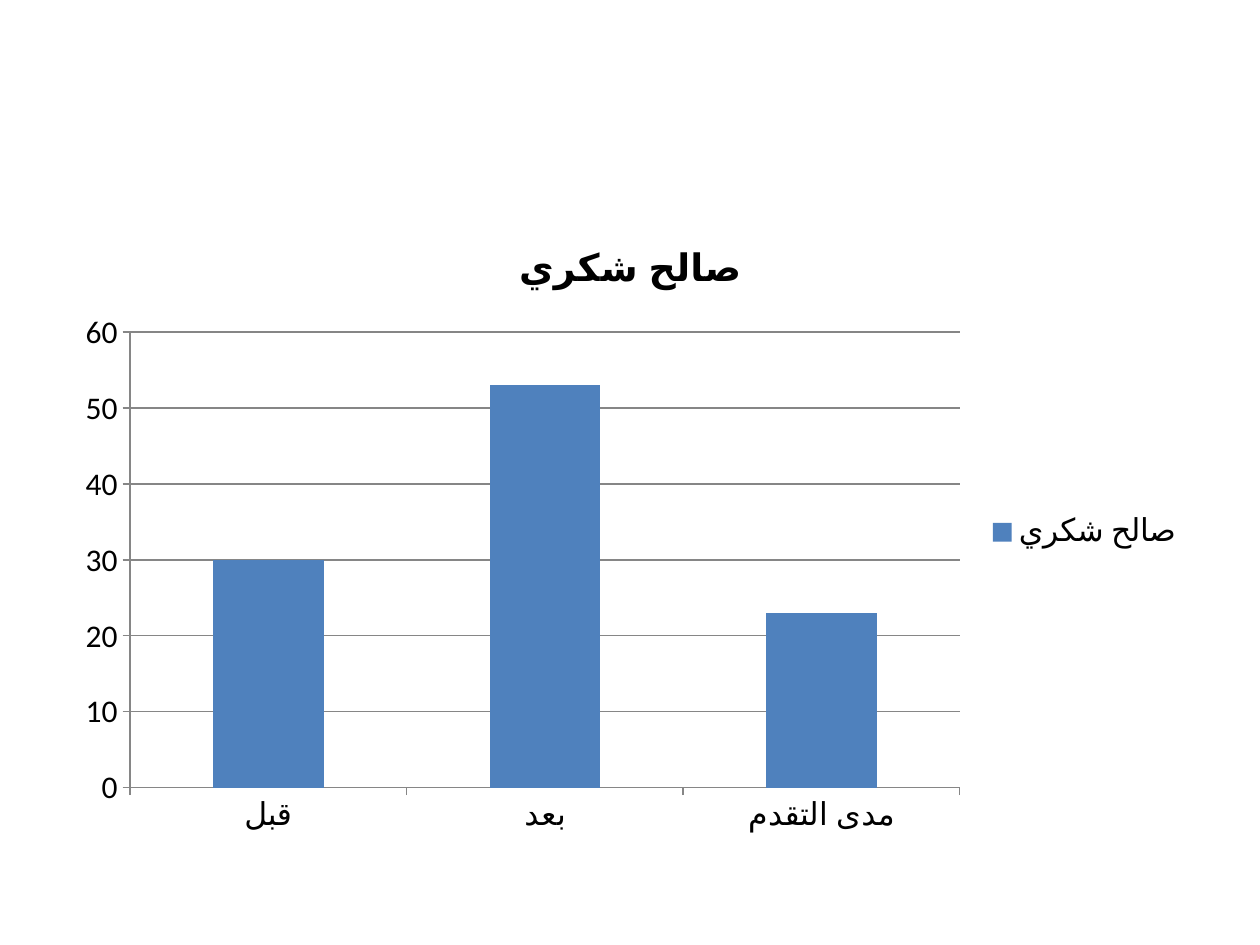
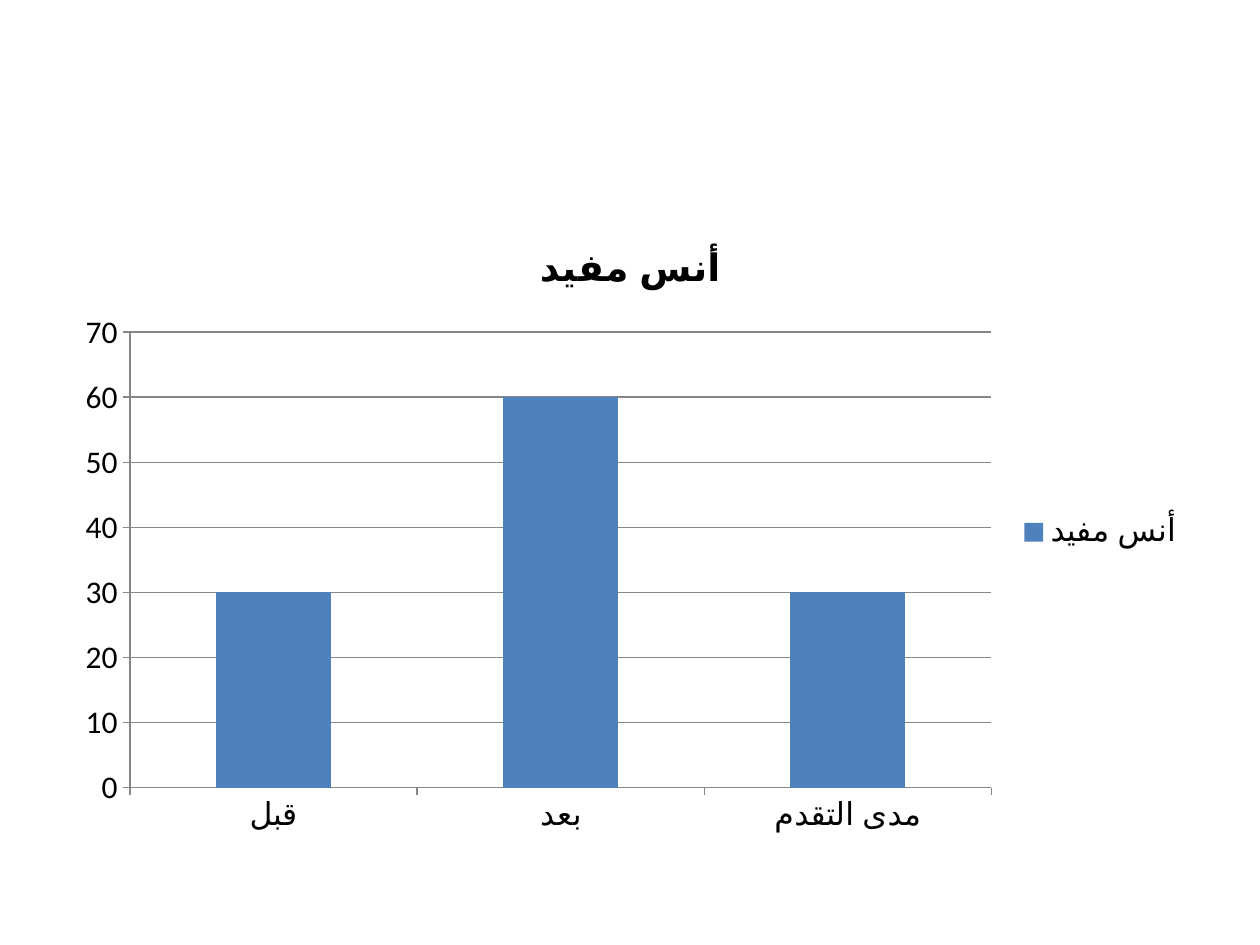
from pptx import Presentation
from pptx.chart.data import CategoryChartData
from pptx.dml.color import RGBColor
from pptx.enum.chart import XL_CHART_TYPE, XL_LEGEND_POSITION, XL_TICK_MARK
from pptx.util import Inches, Pt

BLACK = RGBColor(0x00, 0x00, 0x00)
WHITE = RGBColor(0xFF, 0xFF, 0xFF)
BLUE = RGBColor(0x4F, 0x81, 0xBD)
GRAY = RGBColor(0x86, 0x86, 0x86)

STAGES = ("قبل", "بعد", "مدى التقدم")
# Student: score before, score after
SCORES = {"صالح شكري": (30, 53), "أنس مفيد": (30, 60)}


class Deck:
    """Holds the shared style and the slide being filled."""

    font_name = "Calibri"
    text_size = Pt(18)
    title_size = Pt(21.6)
    line_width = Pt(0.75)

    def __init__(self):
        self.prs = Presentation()
        self.prs.slide_width = Inches(10)
        self.prs.slide_height = Inches(7.5)
        self.slide = None

    def add_slide(self):
        self.slide = self.prs.slides.add_slide(self.prs.slide_layouts[6])
        fill = self.slide.background.fill
        fill.solid()
        fill.fore_color.rgb = WHITE

    def style_font(self, font, size, bold=False):
        font.name = self.font_name
        font.size = size
        font.bold = bold
        font.color.rgb = BLACK

    def style_line(self, line):
        line.color.rgb = GRAY
        line.width = self.line_width

    def add_column_chart(self, name, categories, values):
        data = CategoryChartData()
        data.categories = categories
        data.add_series(name, values)
        chart = self.slide.shapes.add_chart(
            XL_CHART_TYPE.COLUMN_CLUSTERED,
            Inches(0.5), Inches(1.75), Inches(9), Inches(4.95), data).chart
        self.style_font(chart.font, self.text_size)

        chart.has_title = True
        tf = chart.chart_title.text_frame
        tf.text = name
        self.style_font(tf.paragraphs[0].runs[0].font, self.title_size, bold=True)
        chart.chart_title.include_in_layout = False

        chart.has_legend = True
        chart.legend.position = XL_LEGEND_POSITION.RIGHT
        chart.legend.include_in_layout = False

        for axis in (chart.category_axis, chart.value_axis):
            axis.major_tick_mark = XL_TICK_MARK.OUTSIDE
            axis.minor_tick_mark = XL_TICK_MARK.NONE
            self.style_line(axis.format.line)
        chart.value_axis.has_major_gridlines = True
        self.style_line(chart.value_axis.major_gridlines.format.line)

        plot = chart.plots[0]
        plot.vary_by_categories = False
        plot.gap_width = 150
        fill = plot.series[0].format.fill
        fill.solid()
        fill.fore_color.rgb = BLUE


def main():
    deck = Deck()
    for student, (before, after) in SCORES.items():
        deck.add_slide()
        deck.add_column_chart(student, STAGES, (before, after, after - before))
    deck.prs.save("out.pptx")


if __name__ == "__main__":
    main()
